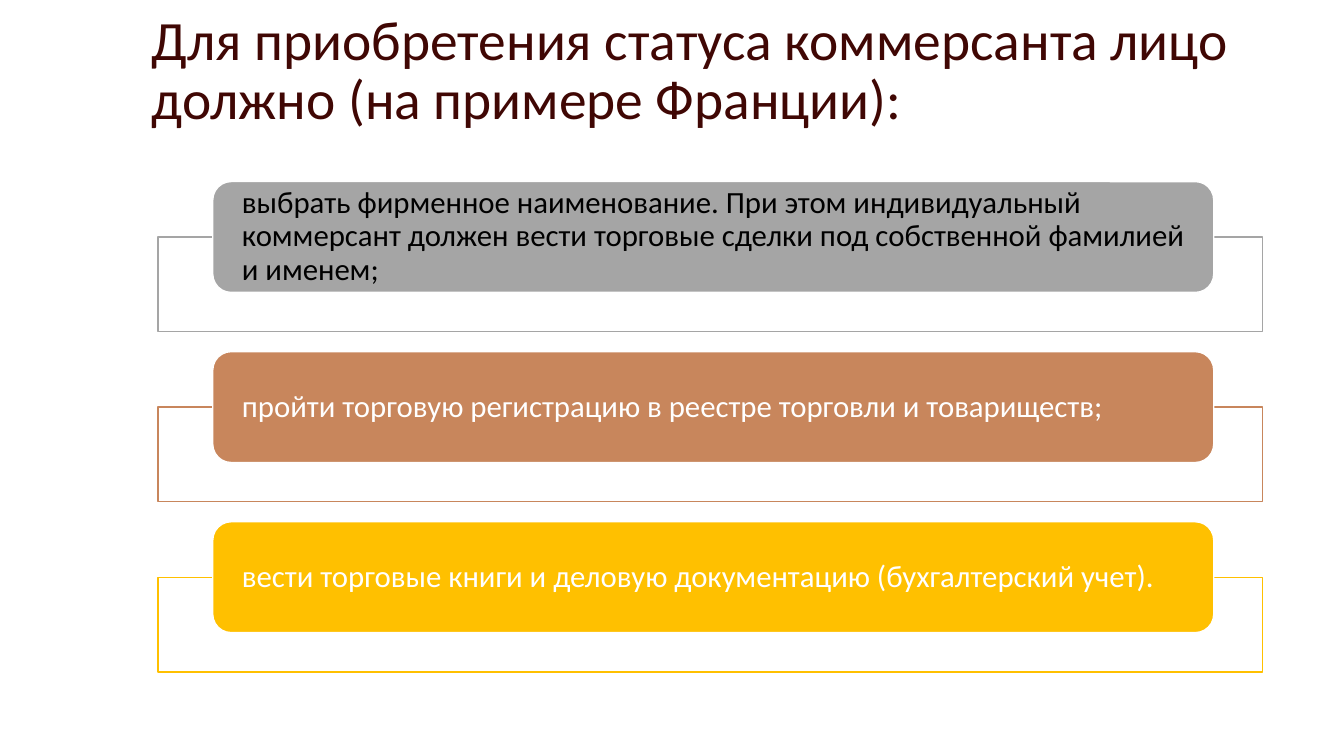
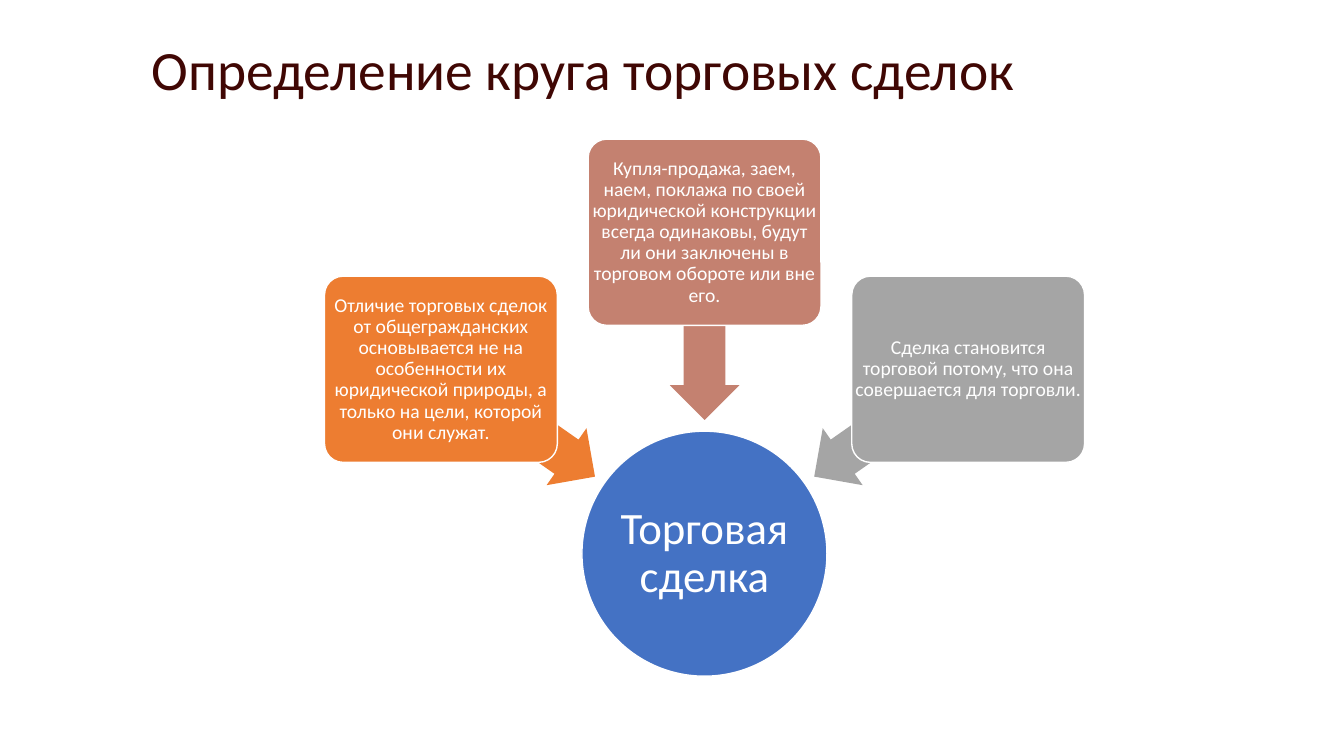
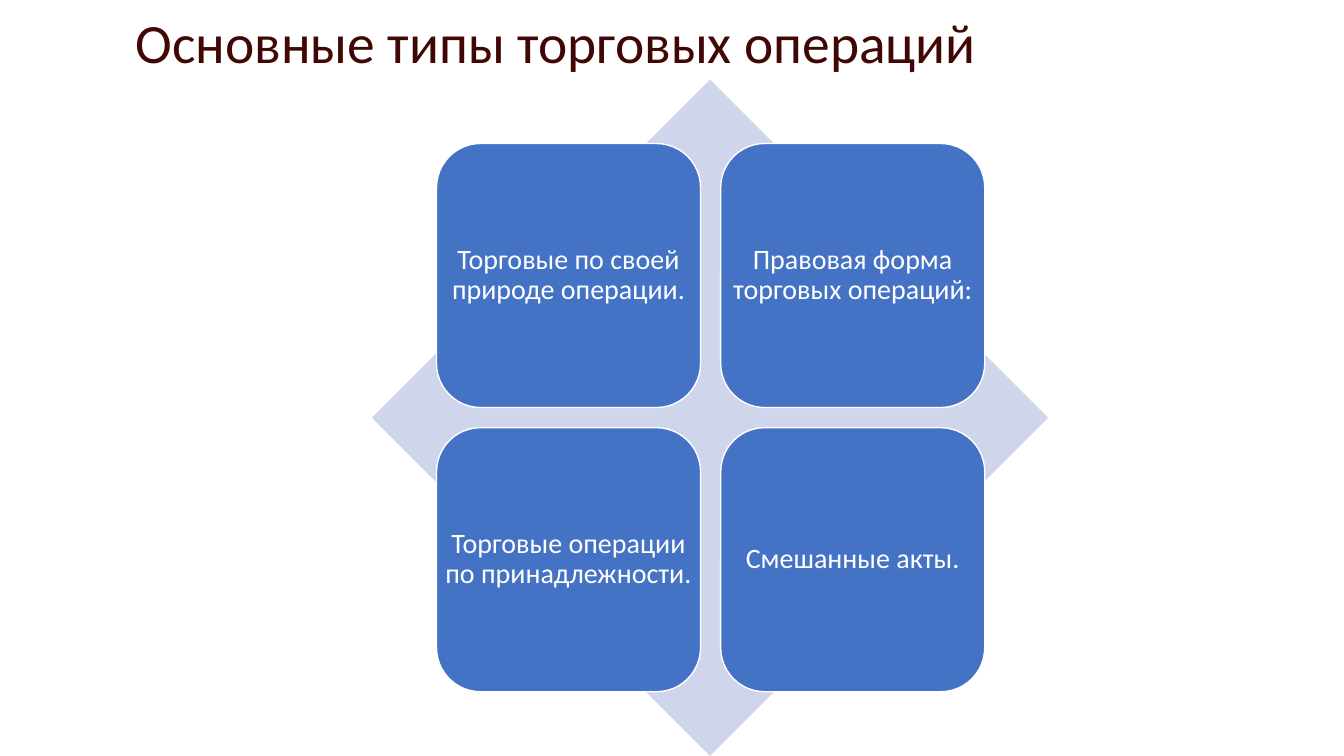
from pptx import Presentation
from pptx.dml.color import RGBColor
from pptx.enum import shapes, text
from pptx.util import Pt


class Theme:
    font = "Calibri"
    title, lead, hub, tile, note = 39.6, 22, 32, 20, 14
    maroon, white, black = "400704", "FFFFFF", "000000"
    blue, pale, orange = "4472C4", "CFD5EA", "ED7D31"
    grey, copper, gold, rose = "A5A5A5", "C8865C", "FFC000", "C48170"


def write(sp, content, size, color=Theme.white, align=text.PP_ALIGN.CENTER, inset=(0, 0)):
    tf = sp.text_frame
    tf.word_wrap = True
    tf.auto_size = text.MSO_AUTO_SIZE.NONE
    tf.vertical_anchor = text.MSO_ANCHOR.MIDDLE
    tf.margin_left = tf.margin_right = Pt(inset[0])
    tf.margin_top = tf.margin_bottom = Pt(inset[1])
    p = tf.paragraphs[0]
    p.alignment = align
    p.line_spacing = 0.9
    r = p.add_run()
    r.text = content
    r.font.name = Theme.font
    r.font.size = Pt(size)
    r.font.color.rgb = RGBColor.from_string(color)


def draw(s, kind, box, fill, line=Theme.white, adj=(), rot=0):
    sp = s.shapes.add_shape(kind, *map(Pt, box))
    sp.shadow.inherit = False
    sp.fill.solid()
    sp.fill.fore_color.rgb = RGBColor.from_string(fill)
    if line:
        sp.line.color.rgb = RGBColor.from_string(line)
        sp.line.width = Pt(1)
    else:
        sp.line.fill.background()
    for i, value in enumerate(adj):
        sp.adjustments[i] = value
    sp.rotation = rot
    return sp


SHAPE = shapes.MSO_SHAPE
LEFT = text.PP_ALIGN.LEFT

prs = Presentation()
prs.slide_width, prs.slide_height = Pt(960), Pt(540)

titles = [
    ("Для приобретения статуса коммерсанта лицо должно (на примере Франции):", 101.5, 31),
    ("Определение круга торговых сделок", 101.5, 31),
    ("Основные типы торговых операций", 90, 12.2),
]
slides = []
for title, x, y in titles:
    s = prs.slides.add_slide(prs.slide_layouts[6])
    tb = s.shapes.add_textbox(Pt(x), Pt(y), Pt(828), Pt(41))
    write(tb, title, Theme.title, Theme.maroon, LEFT, (7.2, 3.6))
    slides.append(s)
steps_slide, deals_slide, types_slide = slides

steps = [
    ("выбрать фирменное наименование. При этом индивидуальный коммерсант должен вести "
     "торговые сделки под собственной фамилией и именем;", Theme.grey, Theme.black),
    ("пройти торговую регистрацию в реестре торговли и товариществ;", Theme.copper, Theme.white),
    ("вести торговые книги и деловую документацию (бухгалтерский учет).", Theme.gold, Theme.white),
]
for i, (step, fill, color) in enumerate(steps):
    y = 129.7 + i * 121.5
    draw(steps_slide, SHAPE.RECTANGLE, (113, y + 39.6, 789, 67.6), Theme.white, fill)
    sp = draw(steps_slide, SHAPE.ROUNDED_RECTANGLE, (152, y, 715, 79.2), fill)
    write(sp, step, Theme.lead, color, LEFT, (17, 0))

hub = draw(deals_slide, SHAPE.OVAL, (415.7, 308, 175, 175), Theme.blue)
write(hub, "Торговая сделка", Theme.hub)

deals = [
    ("Отличие торговых сделок от общегражданских основывается не на особенности их "
     "юридической природы, а только на цели, которой они служат.",
     Theme.orange, 197.3, 277.2, 215),
    ("Купля-продажа, заем, наем, поклажа по своей юридической конструкции всегда "
     "одинаковы, будут ли они заключены в торговом обороте или вне его.",
     Theme.rose, 99.4, 208.1, 270),
    ("Сделка становится торговой потому, что она совершается для торговли.",
     Theme.grey, 197.3, 277.2, 325),
]
for i, (deal, fill, y, arrow_y, rot) in enumerate(deals):
    box = (231.8 + i * 188.3, y, 166.3, 133)
    draw(deals_slide, SHAPE.LEFT_ARROW, (303.1 + i * 133.2, arrow_y, 134, 49.7),
         fill, None, (0.6, 0.5), rot)
    draw(deals_slide, SHAPE.ROUNDED_RECTANGLE, box, fill, adj=(0.1,))
    tb = deals_slide.shapes.add_textbox(*map(Pt, box))
    write(tb, deal, Theme.note, inset=(2, 2))

draw(types_slide, SHAPE.DIAMOND, (265.7, 56.9, 483, 483), Theme.pale, None)
kinds = [
    "Торговые по своей природе операции.",
    "Правовая форма торговых операций:",
    "Торговые операции по принадлежности.",
    "Смешанные акты.",
]
for i, kind in enumerate(kinds):
    row, col = divmod(i, 2)
    box = (311.8 + col * 203, 102.5 + row * 203, 188.6, 188.6)
    draw(types_slide, SHAPE.ROUNDED_RECTANGLE, box, Theme.blue)
    tb = types_slide.shapes.add_textbox(*map(Pt, box))
    write(tb, kind, Theme.tile, inset=(5.5, 5.5))

prs.save("out.pptx")
